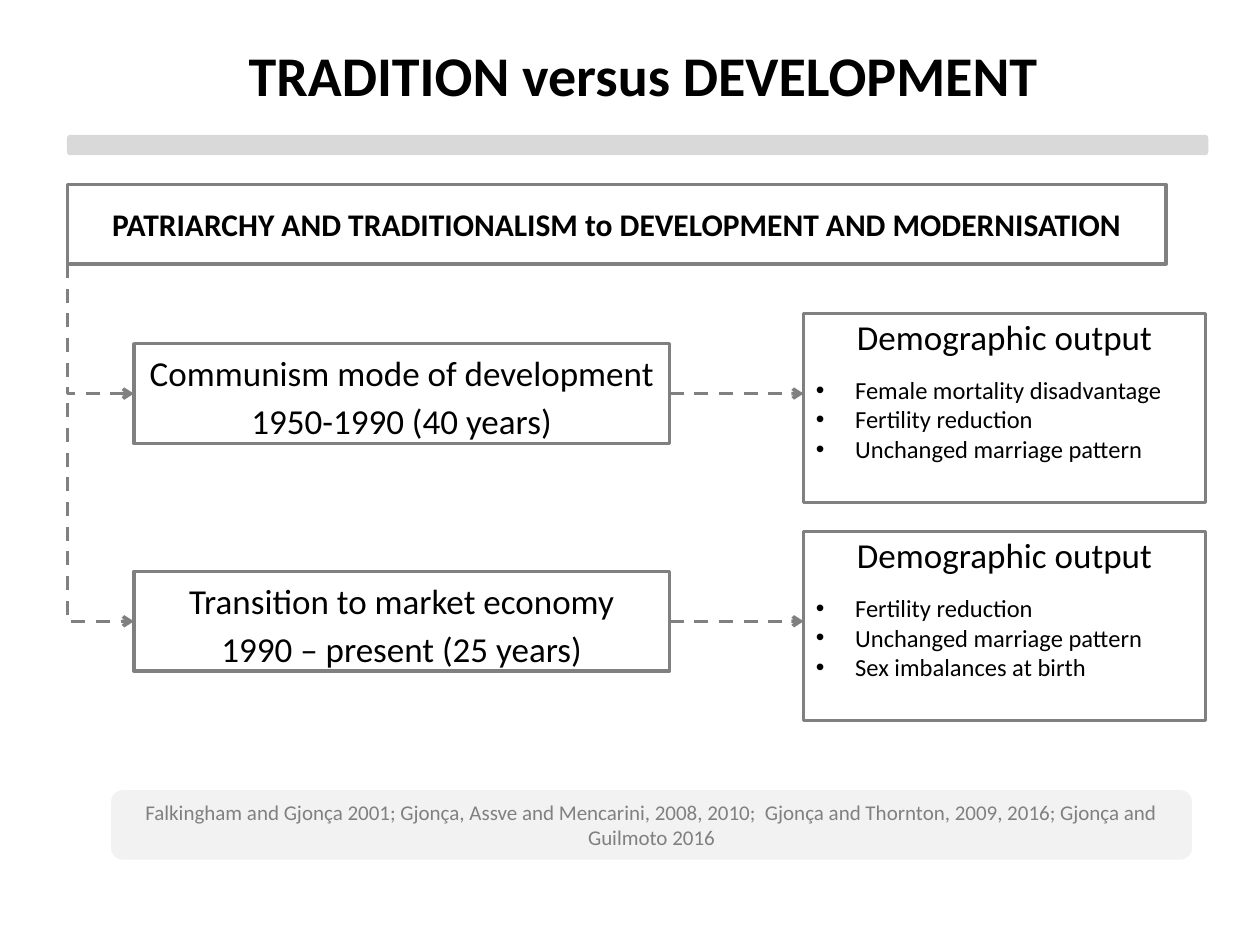
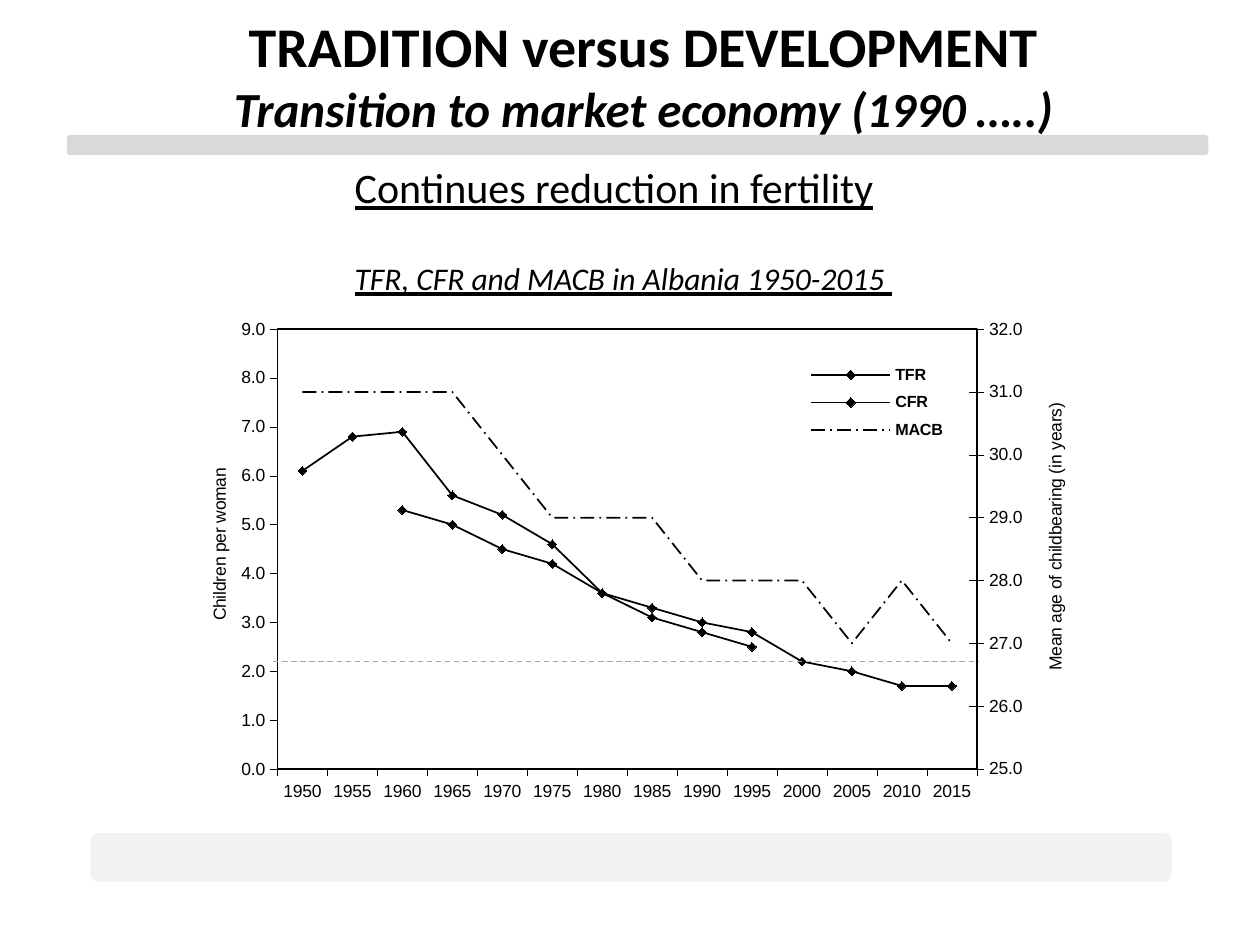
from copy import deepcopy
from dataclasses import dataclass

from lxml import etree
from pptx import Presentation
from pptx.chart import axis as chart_axis
from pptx.chart import data as chart_data
from pptx.dml import color
from pptx.enum import chart as charts
from pptx.enum import dml, shapes, text
from pptx.oxml import parse_xml
from pptx.oxml import ns
from pptx.util import Cm, Pt


@dataclass(frozen=True)
class Theme:
    ink: str = "000000"
    line: str = "808080"
    band: str = "D9D9D9"
    footer: str = "F2F2F2"
    reference: str = "A6A6A6"
    paper: str = "FFFFFF"
    font: str = "Calibri"
    chart_font: str = "Arial"
    title: float = 32
    subtitle: float = 28
    lead: float = 24
    body: float = 20
    strong: float = 18
    bullet: float = 14
    source: float = 12
    axis: float = 10
    legend: float = 9.2


THEME = Theme()
CENTER = text.PP_ALIGN.CENTER
MIDDLE = text.MSO_ANCHOR.MIDDLE
TITLE = "TRADITION versus DEVELOPMENT"
STAGES = [
    ("Communism mode of development", "1950-1990 (40 years)"),
    ("Transition to market economy", "1990 – present (25 years)"),
]
OUTPUTS = [
    ("Female mortality disadvantage", "Fertility reduction", "Unchanged marriage pattern"),
    ("Fertility reduction", "Unchanged marriage pattern", "Sex imbalances at birth"),
]
YEARS = [str(year) for year in range(1950, 2016, 5)]
SERIES = {
    "TFR": [6.1, 6.8, 6.9, 5.6, 5.2, 4.6, 3.6, 3.3, 3, 2.8, 2.2, 2, 1.7, 1.7],
    "CFR": [None, None, 5.3, 5, 4.5, 4.2, 3.6, 3.1, 2.8, 2.5] + [None] * 4,
    "MACB": [31, 31, 31, 31, 30, 29, 29, 29, 28, 28, 28, 27, 28, 27],
}


def rgb(value):
    return color.RGBColor.from_string(value)


def apply(target, **values):
    for name, value in values.items():
        setattr(target, name, value)


def cm_box(left, top, width, height):
    return Cm(left), Cm(top), Cm(width), Cm(height)


# Text
def style_font(font, size, ink=THEME.ink, name=THEME.font, **values):
    apply(font, size=Pt(size), name=name, **values)
    font.color.rgb = rgb(ink)


def write(para, words, size, ink=THEME.ink, layout=None, **font_values):
    span = para.add_run()
    span.text = words
    style_font(span.font, size, ink, **font_values)
    apply(para, **(layout or {}))


def add_bullet(para):
    properties = para._p.get_or_add_pPr()
    apply(para, alignment=text.PP_ALIGN.LEFT)
    properties.set("marL", str(Cm(0.79)))
    properties.set("indent", str(-Cm(0.79)))
    etree.SubElement(properties, ns.qn("a:buFont")).set("typeface", "Arial")
    etree.SubElement(properties, ns.qn("a:buChar")).set("char", "•")


def add_caption(page, box, words, size, **font_values):
    caption = page.shapes.add_textbox(*cm_box(*box))
    caption.text_frame.word_wrap = False
    write(caption.text_frame.paragraphs[0], words, size, underline=True, **font_values)


# Shapes and lines
def add_block(page, box, kind, fill=None, outline=None):
    block = page.shapes.add_shape(kind, *cm_box(*box))
    block.shadow.inherit = False
    if fill:
        block.fill.solid()
        block.fill.fore_color.rgb = rgb(fill)
    else:
        block.fill.background()
    if outline:
        block.line.color.rgb = rgb(outline)
        block.line.width = Pt(2)
    else:
        block.line.fill.background()
    apply(block.text_frame, word_wrap=True, vertical_anchor=MIDDLE)
    return block


def add_panel(page, box, fill=THEME.paper):
    return add_block(page, box, shapes.MSO_SHAPE.RECTANGLE, fill, THEME.line)


def add_dashed(page, start, end, ink=THEME.line, width=2, arrow=True):
    link = page.shapes.add_connector(shapes.MSO_CONNECTOR.STRAIGHT, *start, *end)
    link.line.color.rgb = rgb(ink)
    apply(link.line, width=Pt(width), dash_style=dml.MSO_LINE.DASH)
    properties = link._element.spPr
    if arrow:
        etree.SubElement(properties.find(ns.qn("a:ln")), ns.qn("a:tailEnd")).set("type", "arrow")
    etree.SubElement(properties, ns.qn("a:effectLst"))
    return link


def add_elbow(page, start, end):
    """Run down from the start, then right to the end."""
    link = add_dashed(page, start, end)
    across, down = end[0] - start[0], end[1] - start[1]
    apply(link, left=start[0] + (across - down) // 2, top=start[1] + (down - across) // 2,
          width=down, height=across)
    properties = link._element.spPr
    properties.find(ns.qn("a:prstGeom")).set("prst", "bentConnector2")
    frame = properties.find(ns.qn("a:xfrm"))
    frame.set("rot", "16200000")
    frame.set("flipH", "1")


# Parts shared by the slides
def add_page(deck, title_box, title_lines, footer_box, source=""):
    page = deck.slides.add_slide(deck.slide_layouts[5])
    rounded = shapes.MSO_SHAPE.ROUNDED_RECTANGLE
    add_block(page, (1.35, 2.72, 23.01, 0.41), rounded, THEME.band)
    footer = add_block(page, footer_box, rounded, THEME.footer)
    if source:
        write(footer.text_frame.paragraphs[0], source, THEME.source, THEME.line,
              {"alignment": CENTER})
    title = page.shapes.title
    left, top, width, height = cm_box(*title_box)
    apply(title, left=left, top=top, width=width, height=height)
    frame = title.text_frame
    apply(frame, word_wrap=True, auto_size=text.MSO_AUTO_SIZE.NONE,
          vertical_anchor=text.MSO_ANCHOR.TOP)
    for index, (words, size, italic) in enumerate(title_lines):
        para = frame.add_paragraph() if index else frame.paragraphs[0]
        write(para, words, size, layout={"alignment": CENTER}, bold=True, italic=italic)
    return page


# Slide 1: stages and their outputs
def add_stage(page, box, lines):
    stage = add_panel(page, box)
    frame = stage.text_frame
    for index, words in enumerate(lines):
        para = frame.add_paragraph() if index else frame.paragraphs[0]
        write(para, words, THEME.body, layout={"alignment": CENTER, "line_spacing": 1.15})
    return stage


def add_output(page, box, findings):
    output = add_panel(page, box)
    frame = output.text_frame
    apply(frame, margin_top=0, vertical_anchor=text.MSO_ANCHOR.TOP)
    write(frame.paragraphs[0], "Demographic output", THEME.body,
          layout={"alignment": CENTER, "line_spacing": 1.05, "space_after": Pt(10)})
    for finding in findings:
        para = frame.add_paragraph()
        write(para, finding, THEME.bullet)
        add_bullet(para)
    return output


def build_stages(deck):
    page = add_page(
        deck, (2.24, 0.69, 21.46, 1.63), [(TITLE, THEME.title, False)],
        (2.24, 15.93, 21.79, 1.4),
        "Falkingham and Gjonça 2001; Gjonça, Assve and Mencarini, 2008, 2010;  "
        "Gjonça and Thornton, 2009, 2016; Gjonça and Guilmoto 2016")
    heading = add_panel(page, (1.36, 3.72, 22.15, 1.6), None)
    write(heading.text_frame.paragraphs[0],
          "PATRIARCHY AND TRADITIONALISM to DEVELOPMENT AND MODERNISATION",
          THEME.strong, layout={"alignment": CENTER}, bold=True)
    branch_tops = [heading.top + heading.height, Cm(8.13)]
    for index, branch_top in enumerate(branch_tops):
        stage = add_stage(page, (2.7, 6.93 + 4.59 * index, 10.8, 2.01), STAGES[index])
        output = add_output(page, (16.2, 6.32 + 4.4 * index, 8.1, 3.81), OUTPUTS[index])
        middle = stage.top + stage.height // 2
        arrow = add_dashed(page, (stage.left + stage.width, middle), (output.left, middle))
        arrow.begin_connect(stage, 3)
        add_elbow(page, (heading.left, branch_top), (stage.left, middle))


# Slide 2: fertility chart
def set_layout(parent, position, inner=False):
    """Place a chart part by fractions of the chart area."""
    old = parent.find(ns.qn("c:layout"))
    if old is not None:
        parent.remove(old)
    target = '<c:layoutTarget val="inner"/>' if inner else ""
    modes = "".join(f'<c:{side}Mode val="edge"/>' for side in "xy")
    sizes = "".join(f'<c:{side} val="{value}"/>' for side, value in zip("xywh", position))
    layout = parse_xml(f'<c:layout {ns.nsdecls("c")}><c:manualLayout>{target}{modes}{sizes}'
                       '</c:manualLayout></c:layout>')
    parent.insert(0 if inner else 1, layout)


def style_axis(axis, tick):
    apply(axis, has_major_gridlines=False, major_tick_mark=tick,
          minor_tick_mark=charts.XL_TICK_MARK.NONE)
    style_font(axis.tick_labels.font, THEME.axis, name=THEME.chart_font, bold=False)
    axis.format.line.color.rgb = rgb(THEME.ink)
    axis.format.line.width = Pt(0.25)


def style_value_axis(axis, title, position, low, high, tick):
    style_axis(axis, tick)
    apply(axis, minimum_scale=low, maximum_scale=high, major_unit=1)
    apply(axis.tick_labels, number_format="0.0", number_format_is_linked=False)
    frame = axis.axis_title.text_frame
    write(frame.paragraphs[0], title, THEME.axis, name=THEME.chart_font, bold=False)
    frame._txBody.bodyPr.set("rot", "-5400000")
    frame._txBody.bodyPr.set("vert", "horz")
    set_layout(axis.axis_title._element, position)


def split_right_axis(plot_area):
    """Move the last series to its own lines on a right-hand axis."""
    lines, category, value = [plot_area.find(ns.qn(f"c:{tag}"))
                              for tag in ("lineChart", "catAx", "valAx")]
    right_lines, right_category, right_value = map(deepcopy, (lines, category, value))
    tag = ns.qn("c:ser")
    lines.remove(lines.findall(tag)[-1])
    for series in right_lines.findall(tag)[:-1]:
        right_lines.remove(series)
    ids = ["50010", "50020"]
    for element, number in zip(right_lines.findall(ns.qn("c:axId")), ids):
        element.set("val", number)
    for axis, own, other in ((right_category, *ids), (right_value, *ids[::-1])):
        axis.find(ns.qn("c:axId")).set("val", own)
        axis.find(ns.qn("c:crossAx")).set("val", other)
    right_category.find(ns.qn("c:delete")).set("val", "1")
    right_value.find(ns.qn("c:axPos")).set("val", "r")
    right_value.find(ns.qn("c:crosses")).set("val", "max")
    lines.addnext(right_lines)
    value.addnext(right_category)
    right_category.addnext(right_value)
    return chart_axis.ValueAxis(right_value)


def style_series(series, dashed):
    series.smooth = False
    series.format.line.color.rgb = rgb(THEME.ink)
    series.format.line.width = Pt(1)
    marker = series.marker
    if dashed:
        series.format.line.dash_style = dml.MSO_LINE.LONG_DASH_DOT
        marker.style = charts.XL_MARKER_STYLE.NONE
        return
    apply(marker, style=charts.XL_MARKER_STYLE.DIAMOND, size=5)
    marker.format.fill.solid()
    marker.format.fill.fore_color.rgb = rgb(THEME.ink)
    marker.format.line.color.rgb = rgb(THEME.ink)


def add_fertility_chart(page, box):
    data = chart_data.CategoryChartData(number_format="0.0")
    data.categories = YEARS
    for name, values in SERIES.items():
        data.add_series(name, values)
    chart = page.shapes.add_chart(
        charts.XL_CHART_TYPE.LINE_MARKERS, *cm_box(*box), data).chart
    apply(chart, has_title=False, has_legend=True)
    style_font(chart.font, THEME.axis, name=THEME.chart_font, bold=True)

    # Axes
    plot_area = chart._chartSpace.chart.plotArea
    left_axis = chart.value_axis
    right_axis = split_right_axis(plot_area)
    ticks = charts.XL_TICK_MARK
    style_axis(chart.category_axis, ticks.OUTSIDE)
    style_value_axis(left_axis, "Children per woman", (0.03, 0.32), 0, 9, ticks.OUTSIDE)
    style_value_axis(right_axis, "Mean age of childbearing (in years)", (0.95, 0.2),
                     25, 32, ticks.CROSS)

    # Lines, plot frame and legend
    for plot in chart.plots:
        plot.vary_by_categories = False
        for series in plot.series:
            style_series(series, series.name == "MACB")
    set_layout(plot_area, (0.11, 0.07, 0.77, 0.81), inner=True)
    plot_area.append(parse_xml(
        f'<c:spPr {ns.nsdecls("c", "a")}><a:solidFill><a:srgbClr val="{THEME.paper}"/>'
        f'</a:solidFill><a:ln w="{Pt(1)}"><a:solidFill><a:srgbClr val="{THEME.ink}"/>'
        '</a:solidFill></a:ln></c:spPr>'))
    legend = chart.legend
    apply(legend, position=charts.XL_LEGEND_POSITION.RIGHT, include_in_layout=False)
    style_font(legend.font, THEME.legend, name=THEME.chart_font, bold=True)
    set_layout(legend._element, (0.67, 0.12, 0.2, 0.17))


def build_fertility(deck):
    page = add_page(
        deck, (2.24, 0.1, 21.46, 2.82),
        [(TITLE, THEME.title, False),
         ("Transition to market economy (1990 …..)", THEME.subtitle, True)],
        (1.83, 16.79, 21.79, 0.99))
    add_fertility_chart(page, (3.58, 5.87, 18.31, 10.95))
    add_caption(page, (6.9, 5.1, 11.46, 1.02), "TFR, CFR and MACB in Albania 1950-2015 ",
                THEME.strong, italic=True)
    add_caption(page, (6.9, 3.13, 11.28, 1.27), "Continues reduction in fertility", THEME.lead)
    add_dashed(page, (Cm(5.51), Cm(13.34)), (Cm(19.71), Cm(13.34)),
               THEME.reference, 0.75, arrow=False)


def main():
    deck = Presentation()
    apply(deck, slide_width=Cm(25.4), slide_height=Cm(19.05))
    build_stages(deck)
    build_fertility(deck)
    deck.save("out.pptx")


if __name__ == "__main__":
    main()
